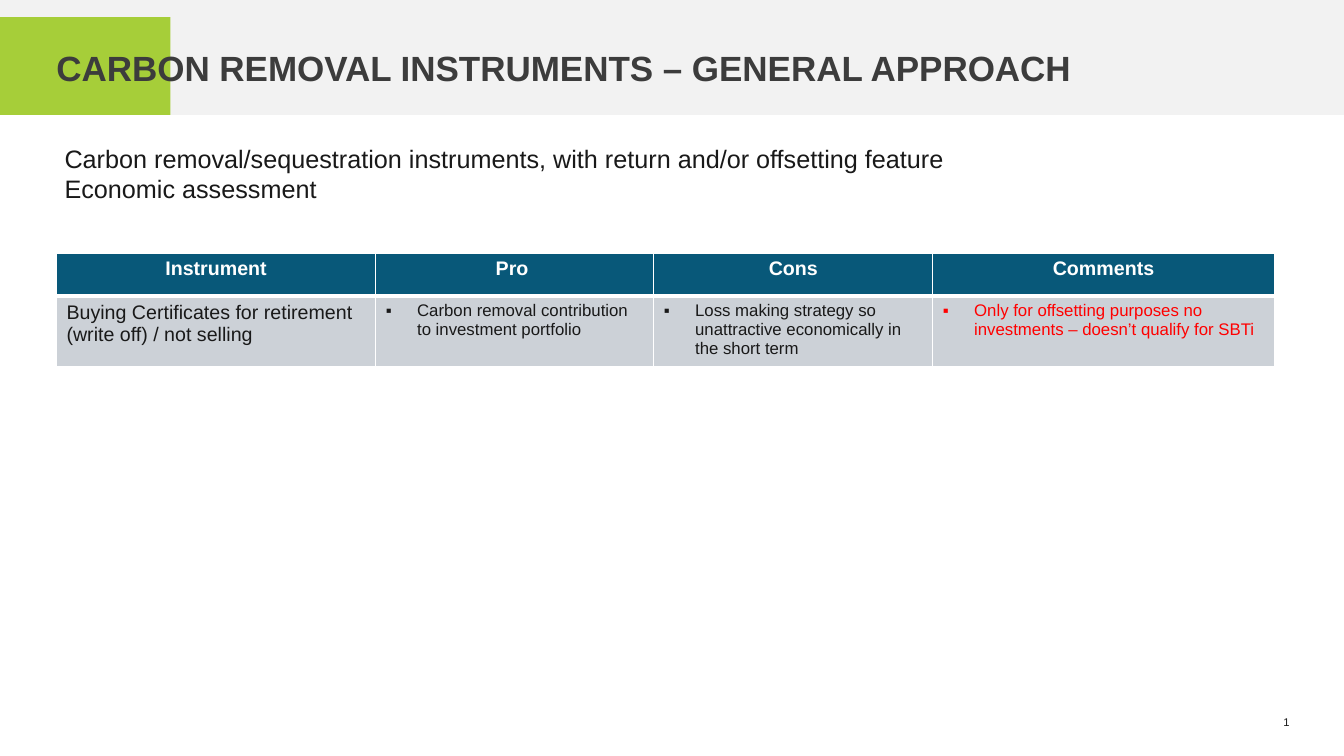
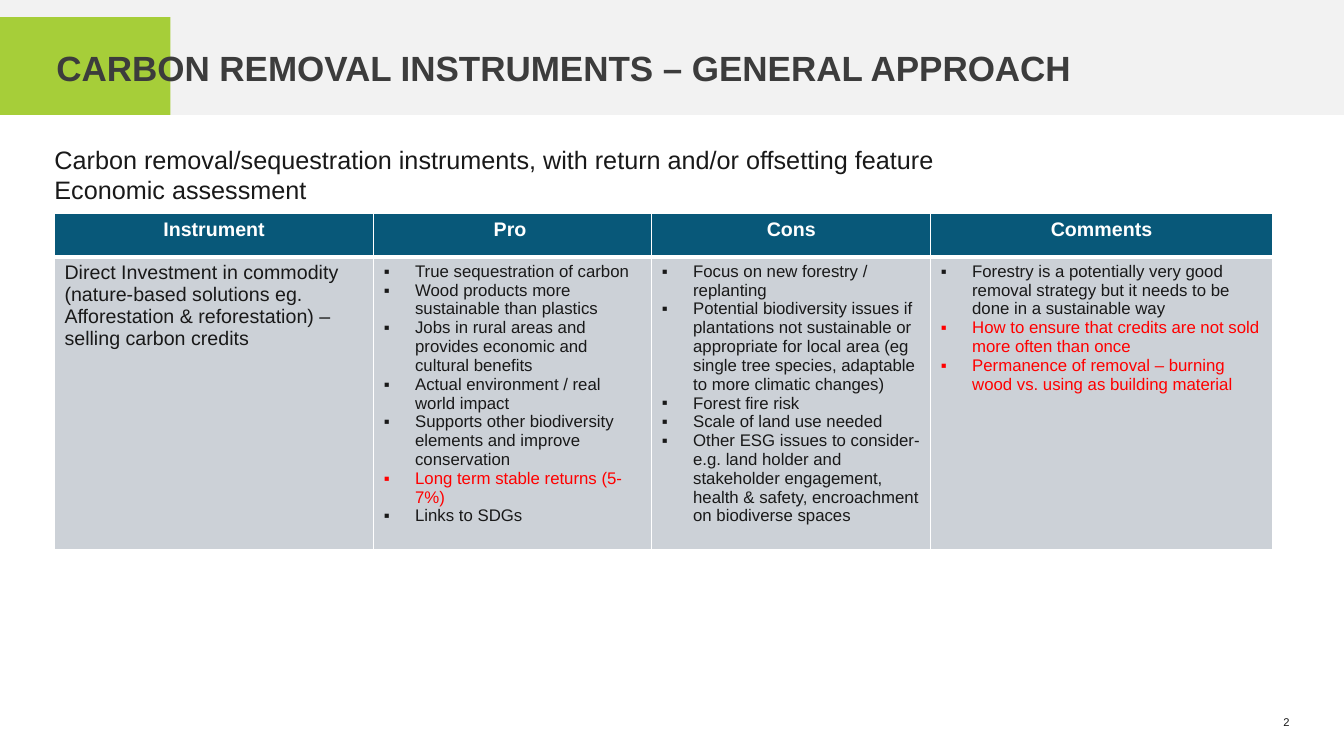
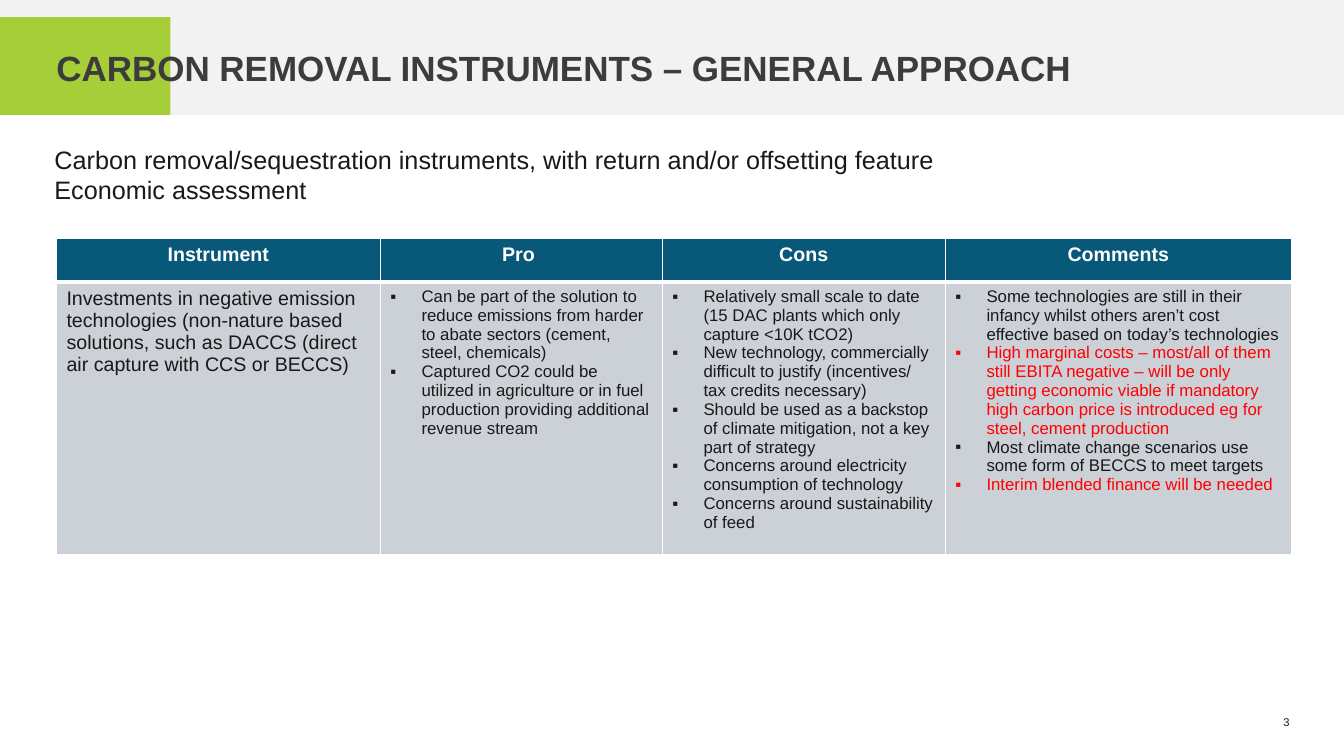
import dataclasses
import typing

import lxml.etree
import pptx
import pptx.dml.color
import pptx.enum.shapes
import pptx.enum.text
import pptx.oxml.ns
import pptx.util

Inches = pptx.util.Inches
Pt = pptx.util.Pt
RGBColor = pptx.dml.color.RGBColor
Align = pptx.enum.text.PP_ALIGN
qn = pptx.oxml.ns.qn

BAND = RGBColor(0xF2, 0xF2, 0xF2)
GREEN = RGBColor(0xA6, 0xCE, 0x39)
BLUE = RGBColor(0x08, 0x58, 0x79)
GREY = RGBColor(0xCC, 0xD1, 0xD7)
WHITE = RGBColor(0xFF, 0xFF, 0xFF)
INK = RGBColor(0x19, 0x19, 0x19)
SLATE = RGBColor(0x3C, 0x3C, 0x3C)
RED = RGBColor(0xFF, 0x00, 0x00)

FONT = "Arial"
TITLE = "CARBON REMOVAL INSTRUMENTS – GENERAL APPROACH"
LEAD = (
    "Carbon removal/sequestration instruments, with return and/or offsetting feature\n"
    "Economic assessment"
)
HEADS = ("Instrument", "Pro ", "Cons", "Comments")
COLS = (3.17, 2.76, 2.77, 3.39)
HEAD_HIGH = 0.43
INDENT = 0.31
THIN, THICK = 1, 3


class Box(typing.NamedTuple):
    """Left, top, width and height in inches."""

    left: float
    top: float
    width: float
    height: float

    def lengths(self) -> list[pptx.util.Length]:
        return [Inches(side) for side in self]


@dataclasses.dataclass(frozen=True)
class Style:
    size: float
    color: RGBColor
    bold: bool = False
    align: Align = Align.LEFT


@dataclasses.dataclass(frozen=True)
class Point:
    text: str
    color: RGBColor = INK


@dataclasses.dataclass(frozen=True)
class Page:
    lead: Box
    table: Box
    name: str
    lists: tuple[list[Point], list[Point], list[Point]]


TITLE_STYLE = Style(25, SLATE, bold=True)
LEAD_STYLE = Style(18, INK)
FOOT_STYLE = Style(8, INK, align=Align.RIGHT)
HEAD_STYLE = Style(14, WHITE, bold=True, align=Align.CENTER)
NAME_STYLE = Style(14, INK)

PAGES = (
    Page(
        Box(0.56, 1.34, 10.29, 0.76),
        Box(0.56, 2.51, 12.08, 1.08),
        "Buying Certificates for retirement (write off) / not selling",
        (
            [Point("Carbon removal contribution to investment portfolio")],
            [Point("Loss making strategy so unattractive economically in the short term")],
            [Point("Only for offsetting purposes no investments – doesn’t qualify for SBTi", RED)],
        ),
    ),
    Page(
        Box(0.46, 1.35, 10.29, 0.76),
        Box(0.54, 2.12, 12.08, 3.13),
        "Direct Investment in commodity (nature-based solutions eg. "
        "Afforestation & reforestation) – selling carbon credits",
        (
            [
                Point("True sequestration of carbon"),
                Point("Wood products more sustainable than plastics"),
                Point("Jobs in rural areas and provides economic and cultural benefits"),
                Point("Actual environment / real world impact"),
                Point("Supports other biodiversity elements and improve conservation"),
                Point("Long term stable returns (5-7%)", RED),
                Point("Links to SDGs"),
            ],
            [
                Point("Focus on new forestry / replanting"),
                Point(
                    "Potential biodiversity issues if plantations not sustainable or "
                    "appropriate for local area (eg single tree species, adaptable to "
                    "more climatic changes)"
                ),
                Point("Forest fire risk"),
                Point("Scale of land use needed"),
                Point(
                    "Other ESG issues to consider- e.g. land holder and stakeholder "
                    "engagement, health & safety, encroachment on biodiverse spaces"
                ),
            ],
            [
                Point(
                    "Forestry is a potentially very good removal strategy but it needs "
                    "to be done in a sustainable way"
                ),
                Point("How to ensure that credits are not sold more often than once", RED),
                Point("Permanence of removal – burning wood vs. using as building material", RED),
            ],
        ),
    ),
    Page(
        Box(0.46, 1.35, 10.29, 0.76),
        Box(0.56, 2.37, 12.25, 2.93),
        "Investments in negative emission technologies (non-nature based solutions, "
        "such as DACCS (direct air capture with CCS or BECCS)",
        (
            [
                Point(
                    "Can be part of the solution to reduce emissions from harder to "
                    "abate sectors (cement, steel, chemicals)"
                ),
                Point(
                    "Captured CO2 could be utilized in agriculture or in fuel "
                    "production providing additional revenue stream"
                ),
            ],
            [
                Point("Relatively small scale to date (15 DAC plants which only capture <10K tCO2)"),
                Point(
                    "New technology, commercially difficult to justify (incentives/ "
                    "tax credits necessary)"
                ),
                Point(
                    "Should be used as a backstop of climate mitigation, not a key "
                    "part of strategy"
                ),
                Point("Concerns around electricity consumption of technology"),
                Point("Concerns around sustainability of feed"),
            ],
            [
                Point(
                    "Some technologies are still in their infancy whilst others aren’t "
                    "cost effective based on today’s technologies"
                ),
                Point(
                    "High marginal costs – most/all of them still EBITA negative – will "
                    "be only getting economic viable if mandatory high carbon price is "
                    "introduced eg for steel, cement production",
                    RED,
                ),
                Point("Most climate change scenarios use some form of BECCS to meet targets"),
                Point("Interim blended finance will be needed", RED),
            ],
        ),
    ),
)


def format_line(line, style: Style) -> None:
    line.alignment = style.align
    for run in line.runs:
        run.font.name = FONT
        run.font.size = Pt(style.size)
        run.font.bold = style.bold
        run.font.color.rgb = style.color


def add_text(slide, box: Box, text: str, style: Style, pad: float = 0):
    """Add a wrapping text box with equal insets and return its frame."""
    frame = slide.shapes.add_textbox(*box.lengths()).text_frame
    frame.word_wrap = True
    frame.margin_left = frame.margin_right = Inches(pad)
    frame.margin_top = frame.margin_bottom = Inches(pad)
    frame.text = text
    for line in frame.paragraphs:
        format_line(line, style)
    return frame


def add_block(slide, box: Box, color: RGBColor) -> None:
    kind = pptx.enum.shapes.MSO_SHAPE.RECTANGLE
    block = slide.shapes.add_shape(kind, *box.lengths())
    block.shadow.inherit = False
    block.fill.solid()
    block.fill.fore_color.rgb = color
    block.line.fill.background()


def add_frame(slide, number: int) -> None:
    """Draw the title band, title and page number that every slide has."""
    add_block(slide, Box(0, 0, 13.33, 1.14), BAND)
    add_block(slide, Box(0, 0.17, 1.69, 0.97), GREEN)
    add_text(slide, Box(12.23, 7.1, 0.56, 0.4), str(number), FOOT_STYLE)
    title = add_text(slide, Box(0.56, 0.37, 11.67, 0.56), TITLE, TITLE_STYLE)
    title.margin_top = Inches(0.04)
    title.vertical_anchor = pptx.enum.text.MSO_ANCHOR.MIDDLE


def set_edges(cell, top: float, bottom: float) -> None:
    """Give a cell white borders; the sides are thin."""
    props = cell._tc.get_or_add_tcPr()
    edges = (("L", THIN), ("R", THIN), ("T", top), ("B", bottom))
    for spot, (side, width) in enumerate(edges):
        edge = lxml.etree.Element(qn(f"a:ln{side}"), w=str(Pt(width)))
        fill = lxml.etree.SubElement(edge, qn("a:solidFill"))
        lxml.etree.SubElement(fill, qn("a:srgbClr"), val=str(WHITE))
        props.insert(spot, edge)


def set_bullet(line) -> None:
    props = line._p.get_or_add_pPr()
    props.set("marL", str(Inches(INDENT)))
    props.set("indent", str(-Inches(INDENT)))
    lxml.etree.SubElement(props, qn("a:buFont"), typeface=FONT)
    lxml.etree.SubElement(props, qn("a:buChar"), char="▪")


def fill_cell(cell, text: str, style: Style, color: RGBColor) -> None:
    cell.text_frame.text = text
    for line in cell.text_frame.paragraphs:
        format_line(line, style)
    cell.fill.solid()
    cell.fill.fore_color.rgb = color


def fill_list(cell, points: list[Point]) -> None:
    fill_cell(cell, "\n".join(point.text for point in points), NAME_STYLE, GREY)
    for line, point in zip(cell.text_frame.paragraphs, points):
        format_line(line, Style(12, point.color))
        set_bullet(line)


def add_grid(slide, page: Page) -> None:
    box = page.table
    grid = slide.shapes.add_table(2, len(HEADS), *box.lengths()).table
    for col, share in zip(grid.columns, COLS):
        col.width = Inches(box.width * share / sum(COLS))
    grid.rows[0].height = Inches(HEAD_HIGH)
    grid.rows[1].height = Inches(box.height - HEAD_HIGH)

    for col, head in enumerate(HEADS):
        fill_cell(grid.cell(0, col), head, HEAD_STYLE, BLUE)
        set_edges(grid.cell(0, col), THIN, THICK)
        set_edges(grid.cell(1, col), THICK, THIN)
    fill_cell(grid.cell(1, 0), page.name, NAME_STYLE, GREY)
    for col, points in enumerate(page.lists, 1):
        fill_list(grid.cell(1, col), points)


def main() -> None:
    deck = pptx.Presentation()
    deck.slide_width, deck.slide_height = Inches(13.33), Inches(7.5)
    blank = deck.slide_layouts[6]
    for number, page in enumerate(PAGES, 1):
        slide = deck.slides.add_slide(blank)
        add_frame(slide, number)
        add_grid(slide, page)
        lead = add_text(slide, page.lead, LEAD, LEAD_STYLE, pad=0.08)
        lead.auto_size = pptx.enum.text.MSO_AUTO_SIZE.SHAPE_TO_FIT_TEXT
    deck.save("out.pptx")


if __name__ == "__main__":
    main()
